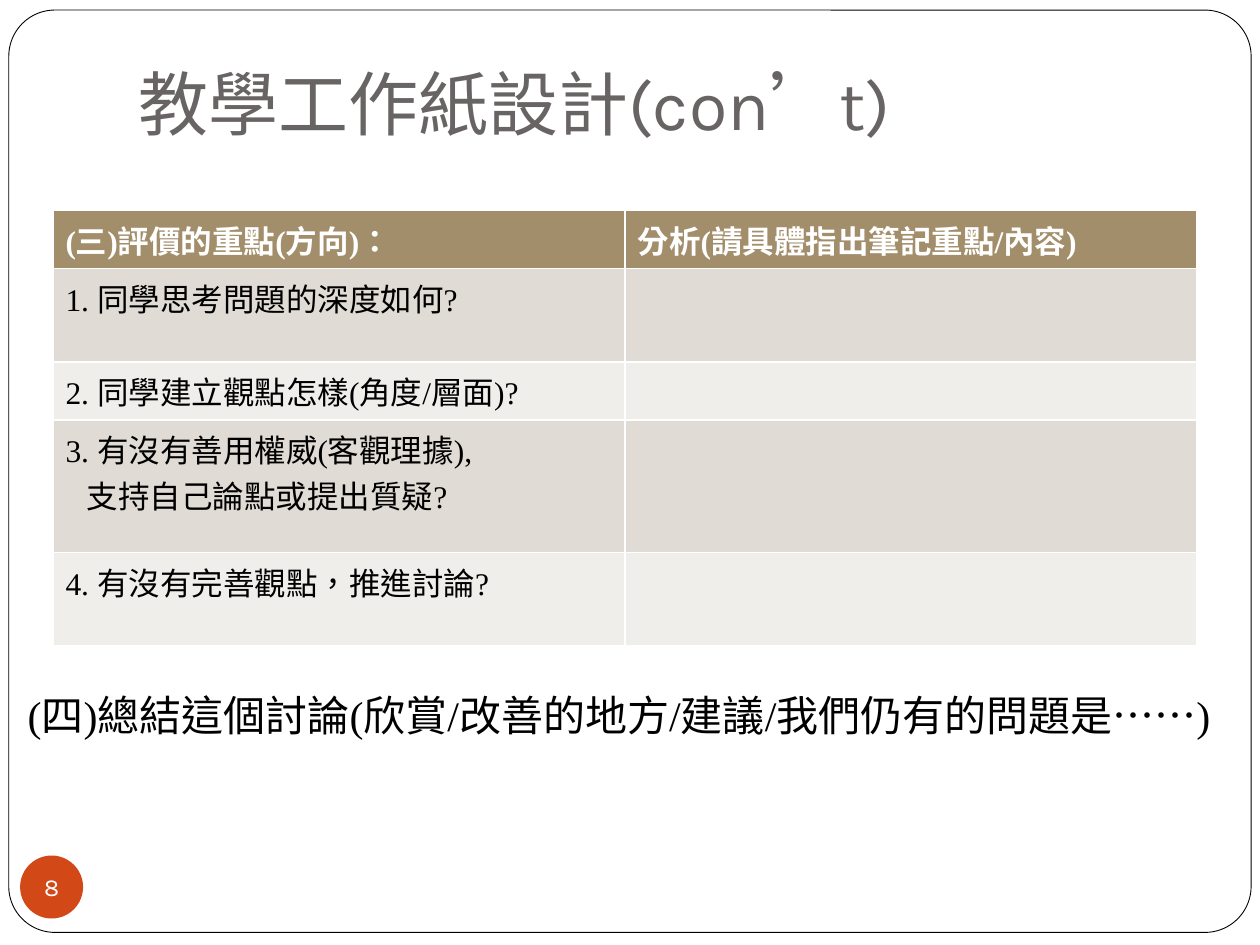
from pptx import Presentation
from pptx.dml.color import RGBColor
from pptx.enum.lang import MSO_LANGUAGE_ID
from pptx.enum.shapes import MSO_SHAPE
from pptx.enum.text import MSO_ANCHOR, MSO_AUTO_SIZE, PP_ALIGN
from pptx.util import Inches, Pt

HEADINGS = ["(三)評價的重點(方向)：", "分析(請具體指出筆記重點/內容)"]
QUESTIONS = [
    "1. 同學思考問題的深度如何?",
    "2. 同學建立觀點怎樣(角度/層面)?",
    "3. 有沒有善用權威(客觀理據),\n支持自己論點或提出質疑?",
    "4. 有沒有完善觀點，推進討論?",
]
ROW_HEIGHTS = [0.43, 0.74, 0.43, 1.05, 0.74]
SUMMARY = "(四)總結這個討論(欣賞/改善的地方/建議/我們仍有的問題是……)"


def rgb(value):
    return RGBColor.from_string(value)


def box(*lengths):
    return [Inches(length) for length in lengths]


class WorksheetSlide:
    HEADING_FONT, BODY_FONT = "Karla", "Times New Roman"
    WHITE, BLACK, GREY = "FFFFFF", "000000", "696464"
    ACCENT, HEADER = "D34817", "A28E6A"
    BANDS = ["E0DBD4", "F0EEEB"]

    def __init__(self, presentation):
        self.slide = presentation.slides.add_slide(presentation.slide_layouts[5])
        self.shapes = self.slide.shapes

    def set_text(self, frame, text, font, size, color, bold=False):
        frame.text = text
        for paragraph in frame.paragraphs:
            for run in paragraph.runs:
                run.font.name = font
                run.font.size = Pt(size)
                run.font.bold = bold
                run.font.color.rgb = rgb(color)
                run.font.language_id = MSO_LANGUAGE_ID.TRADITIONAL_CHINESE

    def shape(self, preset, place, fill):
        shape = self.shapes.add_shape(preset, *box(*place))
        shape.shadow.inherit = False
        shape.fill.solid()
        shape.fill.fore_color.rgb = rgb(fill)
        return shape

    def frame(self, *place):
        """Rounded page border, placed behind everything else."""
        border = self.shape(MSO_SHAPE.ROUNDED_RECTANGLE, place, self.WHITE)
        border.adjustments[0] = 0.05
        border.line.color.rgb = rgb(self.BLACK)
        border.line.width = Pt(0.5)
        self.shapes._spTree.insert(2, border._element)

    def title(self, text, *place):
        title = self.shapes.title
        title.left, title.top, title.width, title.height = box(*place)
        frame = title.text_frame
        self.set_text(frame, text, self.HEADING_FONT, 40, self.GREY)
        frame.auto_size = MSO_AUTO_SIZE.NONE
        frame.vertical_anchor = MSO_ANCHOR.BOTTOM
        frame.margin_bottom = Inches(0.1)
        frame.paragraphs[0].alignment = PP_ALIGN.LEFT

    def page_number(self, number, *place):
        badge = self.shape(MSO_SHAPE.OVAL, place, self.ACCENT)
        badge.line.fill.background()
        frame = badge.text_frame
        self.set_text(frame, number, self.HEADING_FONT, 14, self.WHITE)
        frame.margin_left = frame.margin_right = 0
        frame.margin_top = frame.margin_bottom = 0
        frame.word_wrap = False
        frame.vertical_anchor = MSO_ANCHOR.MIDDLE
        frame.paragraphs[0].alignment = PP_ALIGN.CENTER

    def table(self, rows, heights, *place):
        table = self.shapes.add_table(len(rows), len(rows[0]), *box(*place)).table
        for r, texts in enumerate(rows):
            table.rows[r].height = Inches(heights[r])
            is_header = r == 0
            fill = self.HEADER if is_header else self.BANDS[(r - 1) % 2]
            color = self.WHITE if is_header else self.BLACK
            for c, text in enumerate(texts):
                cell = table.cell(r, c)
                cell.fill.solid()
                cell.fill.fore_color.rgb = rgb(fill)
                self.set_text(cell.text_frame, text, self.BODY_FONT, 18, color, is_header)
                for continued in cell.text_frame.paragraphs[1:]:
                    continued._p.get_or_add_pPr().set("marL", str(Inches(0.17)))

    def text(self, text, *place):
        frame = self.shapes.add_textbox(*box(*place)).text_frame
        frame.word_wrap = True
        self.set_text(frame, text, self.BODY_FONT, 24, self.BLACK)


def main():
    presentation = Presentation()
    presentation.slide_width, presentation.slide_height = box(10, 7.5)
    worksheet = WorksheetSlide(presentation)
    worksheet.frame(0.07, 0.08, 9.86, 7.32)
    worksheet.title("教學工作紙設計(con’t)", 1, 0, 8.5, 1.25)
    worksheet.page_number("8", 0.16, 6.79, 0.5, 0.5)
    rows = [HEADINGS] + [[question, ""] for question in QUESTIONS]
    worksheet.table(rows, ROW_HEIGHTS, 0.42, 1.67, 9.08, sum(ROW_HEIGHTS))
    worksheet.text(SUMMARY, 0.12, 5.42, 9.88, 0.81)
    presentation.save("out.pptx")


if __name__ == "__main__":
    main()
